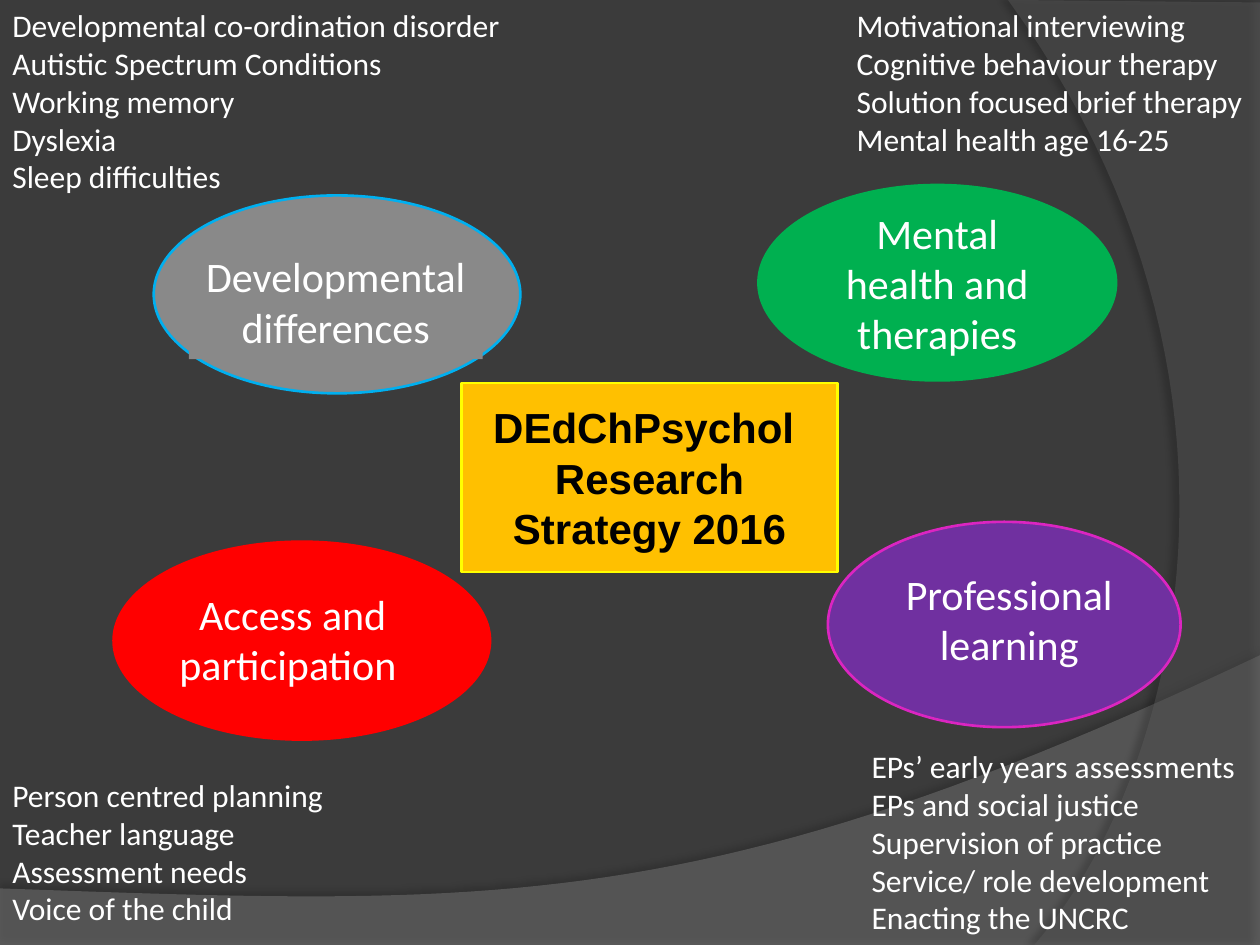
from dataclasses import dataclass

from lxml.etree import SubElement
from pptx import Presentation
from pptx.dml.color import RGBColor
from pptx.enum.shapes import MSO_SHAPE
from pptx.enum.text import MSO_ANCHOR, PP_ALIGN
from pptx.oxml.ns import qn
from pptx.util import Cm, Pt


@dataclass(frozen=True)
class Theme:
    background: str = "3B3B3B"
    wave: str = "7F7F7F"
    arc: str = "5E5E5E"
    shadow: str = "000000"
    text: str = "FFFFFF"
    title_text: str = "000000"
    title_fill: str = "FFC000"
    title_line: str = "FFFF00"
    grey: str = "898989"
    blue: str = "00B0F0"
    green: str = "00B050"
    red: str = "FF0000"
    purple: str = "7030A0"
    pink: str = "DB25C1"
    body_font: str = "Calibri"
    title_font: str = "Arial"
    topic_size: int = 18
    theme_size: int = 24
    outline: float = 1.5


THEME = Theme()
CURVE_STEPS = 48


def rgb(colour):
    return RGBColor.from_string(colour)


def bezier(start, control_1, control_2, end):
    """Points along a cubic curve, both ends included."""
    points = []
    for step in range(CURVE_STEPS + 1):
        t = step / CURVE_STEPS
        weights = ((1 - t) ** 3, 3 * t * (1 - t) ** 2, 3 * t * t * (1 - t), t ** 3)
        corners = (start, control_1, control_2, end)
        points.append(tuple(sum(w * c[axis] for w, c in zip(weights, corners))
                            for axis in (0, 1)))
    return points


def add_swoosh(slide, box, points, colour, opacity, shadow):
    """Translucent outline with points in cm from the box corner.

    shadow is (opacity, blur, distance, direction).
    """
    left, top = box
    placed = [(Cm(left + x), Cm(top + y)) for x, y in points]
    builder = slide.shapes.build_freeform(*placed[0])
    builder.add_line_segments(placed[1:], close=True)
    swoosh = builder.convert_to_shape()
    swoosh.fill.solid()
    swoosh.fill.fore_color.rgb = rgb(colour)
    swoosh.line.fill.background()
    swoosh.shadow.inherit = False

    properties = swoosh._element.spPr
    fill_colour = properties.find(qn("a:solidFill"))[0]
    SubElement(fill_colour, qn("a:alpha"), val=str(opacity * 1000))
    shadow_opacity, blur, distance, direction = shadow
    outer = SubElement(properties.find(qn("a:effectLst")), qn("a:outerShdw"),
                       blurRad=str(Pt(blur)), dist=str(Pt(distance)),
                       dir=str(direction * 60000), algn="ctr", rotWithShape="0")
    shadow_colour = SubElement(outer, qn("a:srgbClr"), val=THEME.shadow)
    SubElement(shadow_colour, qn("a:alpha"), val=str(shadow_opacity * 1000))


def add_backdrop(slide):
    slide.background.fill.solid()
    slide.background.fill.fore_color.rgb = rgb(THEME.background)
    wave = [(0, 5.87), (25.4, 5.87)] + bezier((25.4, 0), (14.2, 5.31), (9.93, 5.05), (0, 4.7))
    add_swoosh(slide, (0, 13.21), wave, THEME.wave, 45, (35, 4, 3.5, 270))
    arc = [(5.08, 0.05), (5.08, 19.05)] + bezier((0.53, 19.05), (3.43, 15.72), (5.54, 7.62), (0, 0))
    add_swoosh(slide, (20.32, 0), arc, THEME.arc, 40, (45, 4, 4, 180))


def add_panel(slide, preset, box, fill, line=None):
    panel = slide.shapes.add_shape(preset, *map(Cm, box))
    panel.shadow.inherit = False
    panel.fill.solid()
    panel.fill.fore_color.rgb = rgb(fill)
    if line:
        panel.line.color.rgb = rgb(line)
        panel.line.width = Pt(THEME.outline)
    else:
        panel.line.fill.background()
    return panel


def write(holder, lines, size, align=PP_ALIGN.LEFT, anchor=MSO_ANCHOR.TOP,
          font=THEME.body_font, colour=THEME.text, bold=False, wrap=True):
    frame = holder.text_frame
    frame.word_wrap = wrap
    frame.vertical_anchor = anchor
    for index, line in enumerate(lines):
        paragraph = frame.paragraphs[0] if index == 0 else frame.add_paragraph()
        paragraph.alignment = align
        run = paragraph.add_run()
        run.text = line
        run.font.size = Pt(size)
        run.font.name = font
        run.font.bold = bold
        run.font.color.rgb = rgb(colour)


def add_theme_oval(slide, box, name, fill, line, label=None, label_fill=None):
    """Oval with its name inside, or in a label box given relative to the oval."""
    oval = add_panel(slide, MSO_SHAPE.OVAL, box, fill, line)
    if label is None:
        write(oval, [name], THEME.theme_size, PP_ALIGN.CENTER, MSO_ANCHOR.MIDDLE)
        return
    dx, dy, width, height = label
    place = (box[0] + dx, box[1] + dy, width, height)
    if label_fill:
        holder = add_panel(slide, MSO_SHAPE.RECTANGLE, place, label_fill)
    else:
        holder = slide.shapes.add_textbox(*map(Cm, place))
    write(holder, [name], THEME.theme_size, PP_ALIGN.CENTER)


def add_topics(slide, box, topics, wrap=True):
    holder = slide.shapes.add_textbox(*map(Cm, box))
    write(holder, topics, THEME.topic_size, wrap=wrap)


def add_title(slide, box):
    panel = add_panel(slide, MSO_SHAPE.RECTANGLE, box, THEME.title_fill, THEME.title_line)
    write(panel, ["DEdChPsychol ", "Research Strategy 2016"], THEME.theme_size,
          PP_ALIGN.CENTER, MSO_ANCHOR.MIDDLE, THEME.title_font, THEME.title_text, bold=True)


def main():
    deck = Presentation()
    deck.slide_width, deck.slide_height = Cm(25.4), Cm(19.05)
    slide = deck.slides.add_slide(deck.slide_layouts[6])
    add_backdrop(slide)

    add_theme_oval(slide, (15.29, 3.73, 7.21, 3.94), "Mental health and therapies",
                   THEME.green, THEME.green)
    add_theme_oval(slide, (3.1, 3.94, 7.39, 3.99), "Developmental differences",
                   THEME.grey, THEME.blue, (0.71, 0.99, 5.92, 2.31), THEME.grey)
    add_theme_oval(slide, (2.29, 10.92, 7.59, 3.99), " Access and participation",
                   THEME.red, THEME.red, (-0.18, 0.81, 7.39, 2.31))
    add_theme_oval(slide, (16.69, 10.52, 7.11, 4.14), "Professional learning",
                   THEME.purple, THEME.pink, (0.81, 0.81, 5.69, 2.31))

    add_topics(slide, (0, 0, 10.46, 4.88), [
        "Developmental co-ordination disorder", "Autistic Spectrum Conditions",
        "Working memory", "Dyslexia", "Sleep difficulties"])
    add_topics(slide, (17.02, 0, 8.38, 3.33), [
        "Motivational interviewing", "Cognitive behaviour therapy",
        "Solution focused brief therapy", "Mental health age 16-25"], wrap=False)
    add_topics(slide, (0, 15.52, 6.86, 3.33), [
        "Person centred planning", "Teacher language",
        "Assessment needs", "Voice of the child"])
    add_topics(slide, (17.32, 14.94, 8.08, 4.11), [
        "EPs’ early years assessments", "EPs and social justice",
        "Supervision of practice", "Service/ role development",
        "Enacting the UNCRC"], wrap=False)

    add_title(slide, (9.3, 7.72, 7.59, 3.81))
    deck.save("out.pptx")


if __name__ == "__main__":
    main()
